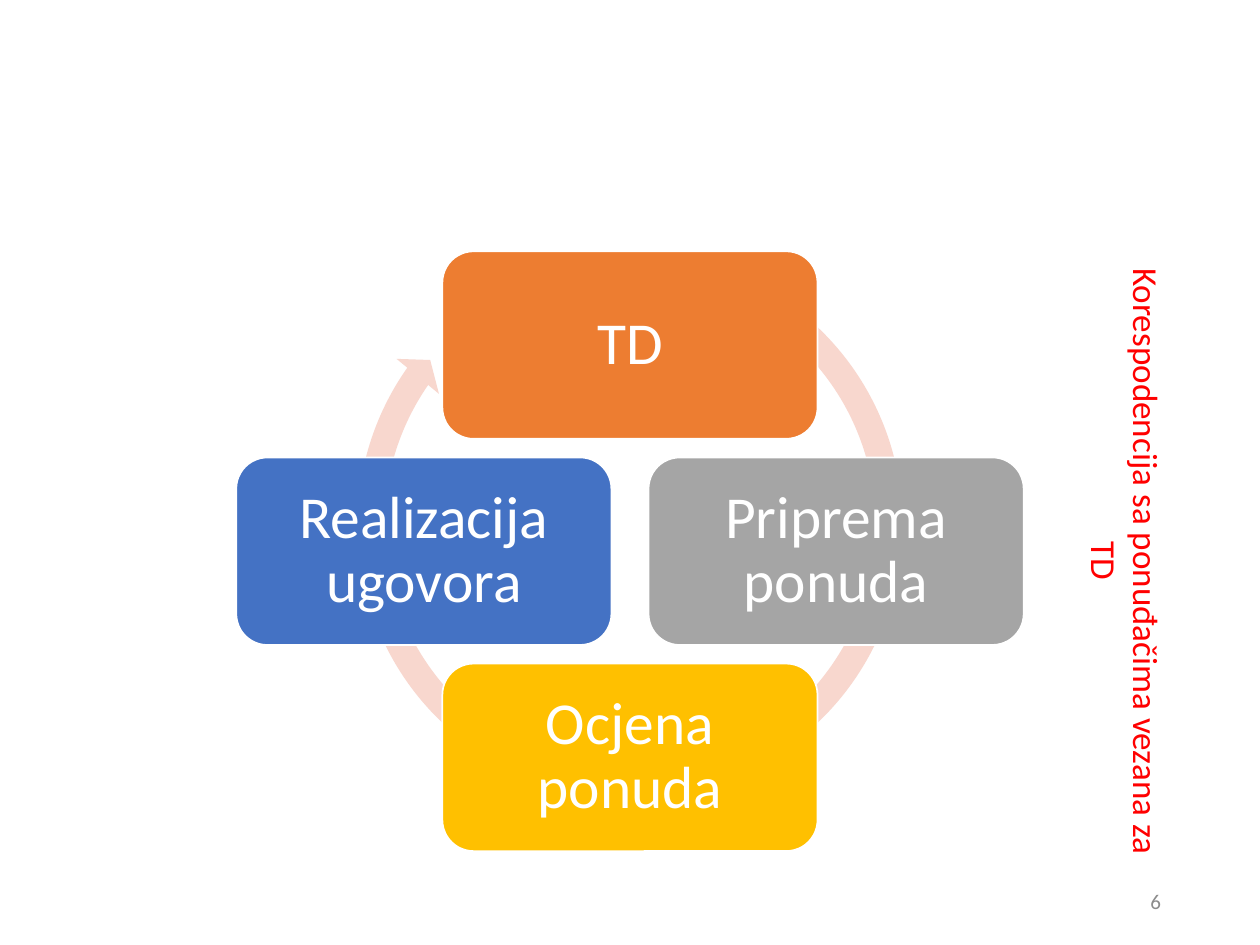
from dataclasses import dataclass

from pptx import Presentation
from pptx.dml.color import RGBColor
from pptx.enum import shapes, text
from pptx.oxml.ns import qn
from pptx.util import Pt


@dataclass(frozen=True)
class Theme:
    font: str = "Calibri"
    white: str = "FFFFFF"
    ring: str = "F8D7CE"
    orange: str = "ED7D31"
    gray: str = "A5A5A5"
    gold: str = "FFC000"
    blue: str = "4472C4"
    note: str = "FF0000"
    number: str = "8C8C8C"
    stage_size: int = 34
    note_size: int = 20
    number_size: int = 12


class SlideBuilder:
    def __init__(self, slide, theme):
        self.slide = slide
        self.theme = theme

    def set_words(self, shape, words, size, color, align):
        shape.text_frame.word_wrap = True
        paragraph = shape.text_frame.paragraphs[0]
        paragraph.text = words
        paragraph.alignment = align
        paragraph.font.name = self.theme.font
        paragraph.font.size = Pt(size)
        paragraph.font.color.rgb = RGBColor.from_string(color)
        return paragraph

    def centered_shape(self, kind, center, size, fill):
        (x, y), (width, height) = center, size
        shape = self.slide.shapes.add_shape(
            kind, Pt(x - width / 2), Pt(y - height / 2), Pt(width), Pt(height))
        shape.shadow.inherit = False
        shape.fill.solid()
        shape.fill.fore_color.rgb = RGBColor.from_string(fill)
        return shape

    def cycle_arrow(self, center, diameter):
        arrow = self.centered_shape(shapes.MSO_SHAPE.CIRCULAR_ARROW, center,
                                    (diameter, diameter), self.theme.ring)
        arrow.line.fill.background()
        # Band width, head angle, end angle, start angle, head width;
        # angles are in units of 100000/60000 degrees.
        for index, value in enumerate((0.047, 2.729, 128.999, 179.843, 0.048)):
            arrow.adjustments[index] = value

    def stage(self, words, center, size, fill):
        box = self.centered_shape(shapes.MSO_SHAPE.ROUNDED_RECTANGLE, center, size, fill)
        box.line.color.rgb = RGBColor.from_string(self.theme.white)
        box.line.width = Pt(1)
        frame = box.text_frame
        frame.margin_left = frame.margin_right = Pt(10.2)
        frame.margin_top = frame.margin_bottom = Pt(10.2)
        frame.vertical_anchor = text.MSO_ANCHOR.MIDDLE
        paragraph = self.set_words(box, words, self.theme.stage_size,
                                   self.theme.white, text.PP_ALIGN.CENTER)
        paragraph.line_spacing = 0.9

    def text_box(self, words, left, top, width, height, size, color, align):
        box = self.slide.shapes.add_textbox(Pt(left), Pt(top), Pt(width), Pt(height))
        self.set_words(box, words, size, color, align)
        return box

    def vertical_note(self, words, *place):
        box = self.text_box(words, *place, self.theme.note_size,
                            self.theme.note, text.PP_ALIGN.CENTER)
        box.text_frame.auto_size = text.MSO_AUTO_SIZE.SHAPE_TO_FIT_TEXT
        box.element.find(".//" + qn("a:bodyPr")).set("vert", "vert")

    def slide_number(self, words, *place):
        box = self.text_box(words, *place, self.theme.number_size,
                            self.theme.number, text.PP_ALIGN.RIGHT)
        box.text_frame.vertical_anchor = text.MSO_ANCHOR.MIDDLE


def main():
    presentation = Presentation()
    presentation.slide_width, presentation.slide_height = Pt(720), Pt(540)
    blank_layout = presentation.slide_layouts[6]
    theme = Theme()
    builder = SlideBuilder(presentation.slides.add_slide(blank_layout), theme)

    center_x, center_y, radius = 360, 315, 117.8
    builder.cycle_arrow((center_x, 300), 327.6)
    stages = (
        ("TD", 0, -1, theme.orange),
        ("Priprema ponuda", 1, 0, theme.gray),
        ("Ocjena ponuda", 0, 1, theme.gold),
        ("Realizacija ugovora", -1, 0, theme.blue),
    )
    for words, across, down, fill in stages:
        center = (center_x + across * radius, center_y + down * radius)
        builder.stage(words, center, (214.4, 107.2), fill)

    builder.slide_number("6", 508.5, 500.5, 162, 28.75)
    builder.vertical_note("Korespodencija sa ponuđačima vezana za TD",
                          607.7, 142.5, 63.4, 356.4)
    presentation.save("out.pptx")


if __name__ == "__main__":
    main()
